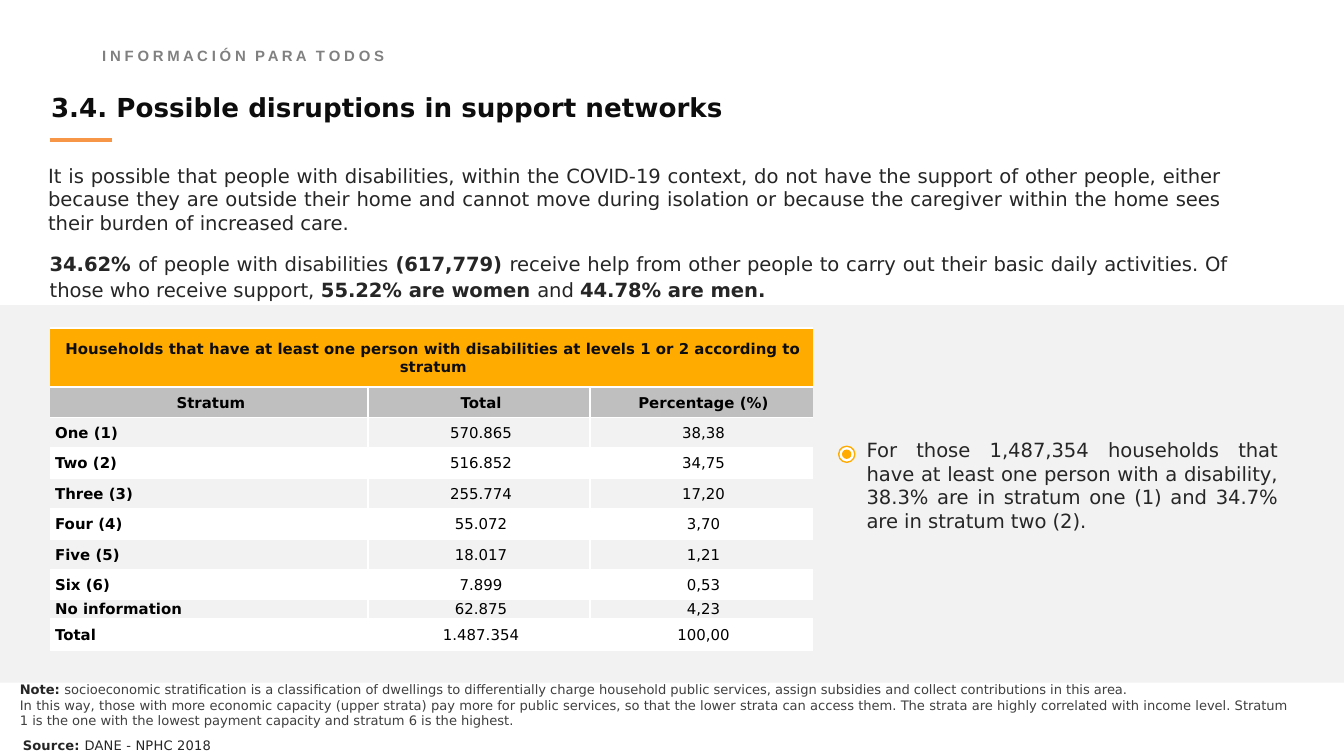
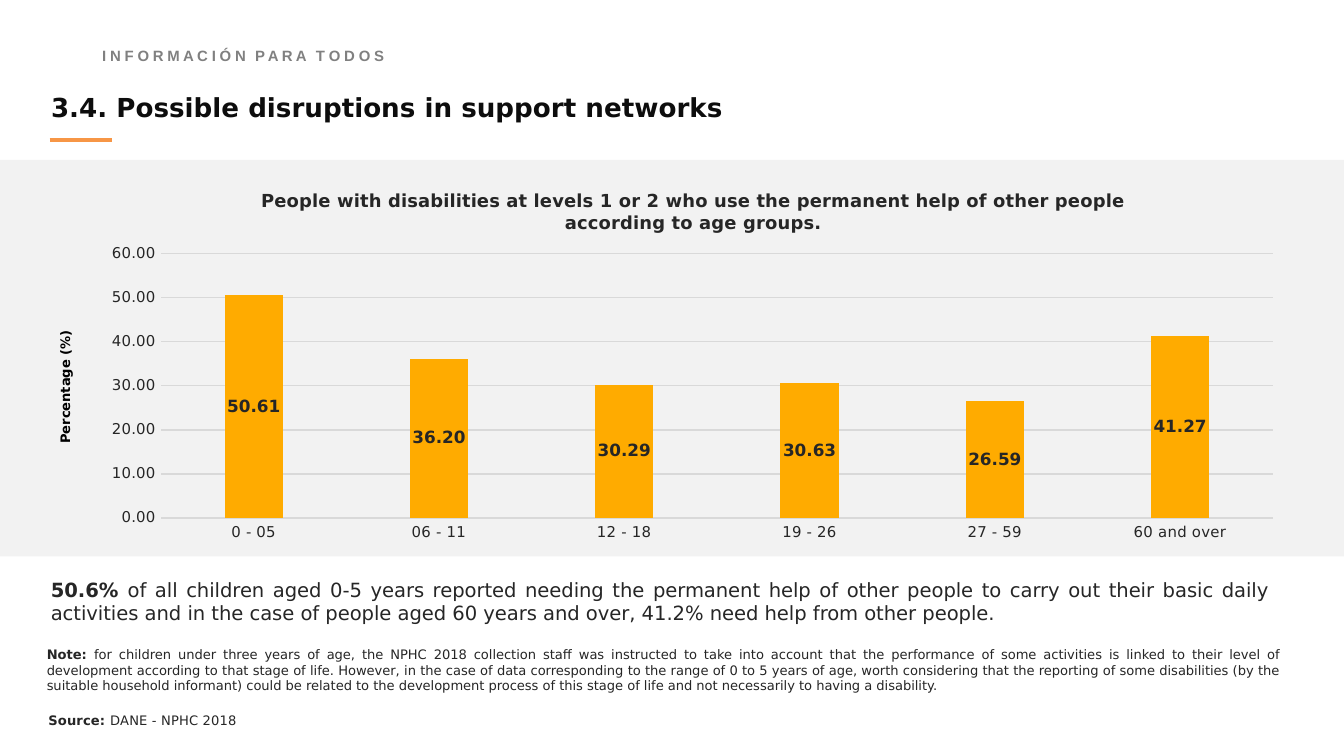
from dataclasses import dataclass

from pptx import Presentation
from pptx.chart.data import CategoryChartData
from pptx.dml.color import RGBColor
from pptx.enum.chart import XL_CHART_TYPE as Chart, XL_LABEL_POSITION as LabelAt, XL_TICK_MARK as Tick
from pptx.enum.shapes import MSO_CONNECTOR as Connector, MSO_SHAPE as Shape
from pptx.enum.text import MSO_ANCHOR as Anchor, MSO_AUTO_SIZE as AutoSize, PP_ALIGN as Align
from pptx.oxml import parse_xml
from pptx.oxml.ns import nsdecls, qn
from pptx.util import Inches, Pt

AMBER, ORANGE, WHITE, BLACK = "FFAB00", "F79646", "FFFFFF", "000000"
BAND, GRID, HEADING = "F2F2F2", "D9D9D9", "BFBFBF"
INK, TITLE_INK, NOTE_INK, MOTTO_INK = "262626", "0D0D0D", "404040", "808080"
PADDED, TIGHT = (0.1, 0.05, 0.1, 0.05), (0.02, 0.01, 0, 0)
CELL_INSETS = (0.04, 0.01, 0.01, 0)


def rgb(value):
    return RGBColor.from_string(value)


def inches(values):
    return [Inches(value) for value in values]


@dataclass
class Part:
    """A stretch of text in one style."""
    text: str
    bold: bool = False
    color: str = INK
    spacing: float = 0


class Deck:
    font = "DejaVu Sans"

    def __init__(self):
        self.file = Presentation()
        self.file.slide_width = Inches(10)
        self.file.slide_height = Inches(10 * 9 / 16)
        self.slide = None

    def new_slide(self, title, band_top, band_height):
        """Start a slide with the shared motto, band, title and rule."""
        self.slide = self.file.slides.add_slide(self.file.slide_layouts[6])
        motto = []
        for word in ("INFORMACIÓN", "PARA", "TODOS"):
            if motto:
                motto.append(Part(" ", True, MOTTO_INK, 2.6))
            motto.append(Part(" ".join(word), True, MOTTO_INK, -0.1))
        self.text((0.74, 0.3, 3.07, 0.19), [motto], 8, font="Arial",
                  insets=TIGHT, leading=1.3)
        self.shape(Shape.RECTANGLE, (0, band_top, 10, band_height), BAND)
        self.text((0.37, 0.68, 7.26, 0.24), [[Part(title, True, TITLE_INK)]], 14,
                  align=Align.LEFT, insets=(0.01, 0, 0, 0))
        self.rule((0.37, 1.04), (0.83, 1.04))

    def fill_paragraph(self, paragraph, parts, size, align, font=None):
        paragraph.alignment = align
        for part in parts:
            run = paragraph.add_run()
            run.text = part.text
            run.font.name = font or self.font
            run.font.size = Pt(size)
            run.font.bold = part.bold
            run.font.color.rgb = rgb(part.color)
            if part.spacing:
                run._r.get_or_add_rPr().set("spc", str(round(part.spacing * 100)))

    def text(self, box, paragraphs, size, align=Align.JUSTIFY, font=None,
             insets=PADDED, leading=None, rotation=0):
        holder = self.slide.shapes.add_textbox(*inches(box))
        holder.rotation = rotation
        frame = holder.text_frame
        frame.word_wrap = True
        frame.auto_size = AutoSize.SHAPE_TO_FIT_TEXT
        (frame.margin_left, frame.margin_top,
         frame.margin_right, frame.margin_bottom) = inches(insets)
        for index, parts in enumerate(paragraphs):
            paragraph = frame.add_paragraph() if index else frame.paragraphs[0]
            if leading:
                paragraph.line_spacing = leading
            self.fill_paragraph(paragraph, parts, size, align, font)

    def source(self, left, top):
        self.text((left, top, 6.8, 0.13),
                  [[Part("Source: ", True, spacing=0.1),
                    Part("DANE - NPHC 2018", spacing=0.1)]],
                  7, align=Align.LEFT, insets=TIGHT, leading=1.04)

    def shape(self, kind, box, fill, line=None, group=None):
        shapes = group.shapes if group else self.slide.shapes
        drawn = shapes.add_shape(kind, *inches(box))
        drawn.shadow.inherit = False
        drawn.fill.solid()
        drawn.fill.fore_color.rgb = rgb(fill)
        if line:
            drawn.line.color.rgb = rgb(line)
            drawn.line.width = Pt(0.75)
        else:
            drawn.line.fill.background()

    def rule(self, start, end):
        line = self.slide.shapes.add_connector(Connector.STRAIGHT, *inches(start + end))
        line.line.color.rgb = rgb(ORANGE)
        line.line.width = Pt(2)
        line._element.spPr.append(parse_xml(f"<a:effectLst {nsdecls('a')}/>"))

    def bullet(self, left, top, ring=0.12, dot=0.07):
        """A ringed dot."""
        group = self.slide.shapes.add_group_shape()
        inset = (ring - dot) / 2
        self.shape(Shape.OVAL, (left, top, ring, ring), WHITE, AMBER, group)
        self.shape(Shape.OVAL, (left + inset, top + inset, dot, dot), AMBER, group=group)

    def cell(self, cell, part, align, fill, open_sides=""):
        cell.vertical_anchor = Anchor.MIDDLE
        (cell.margin_left, cell.margin_top,
         cell.margin_right, cell.margin_bottom) = inches(CELL_INSETS)
        self.fill_paragraph(cell.text_frame.paragraphs[0], [part], 8, align)
        properties = cell._tc.get_or_add_tcPr()
        for side in "LRTB":
            paint = ("<a:noFill/>" if side in open_sides else
                     f'<a:solidFill><a:srgbClr val="{WHITE}"/></a:solidFill>')
            properties.append(parse_xml(
                f'<a:ln{side} {nsdecls("a")} w="{Pt(1)}">{paint}</a:ln{side}>'))
        if fill:
            cell.fill.solid()
            cell.fill.fore_color.rgb = rgb(fill)
        else:
            cell.fill.background()

    def table(self, box, widths, heights, caption, headings, rows):
        grid = self.slide.shapes.add_table(
            len(heights), len(widths), *inches(box)).table
        grid.first_row = grid.horz_banding = False
        for column, width in zip(grid.columns, inches(widths)):
            column.width = width
        for row, height in zip(grid.rows, inches(heights)):
            row.height = height
        last = len(widths) - 1
        grid.cell(0, 0).merge(grid.cell(0, last))
        self.cell(grid.cell(0, 0), Part(caption, True, TITLE_INK), Align.CENTER, AMBER, "LR")
        for r, values in enumerate([headings, *rows], start=1):
            fill = HEADING if r == 1 else WHITE if r % 2 else None
            for c, value in enumerate(values):
                is_label = c == 0 and r > 1
                self.cell(grid.cell(r, c), Part(value, r == 1 or c == 0, BLACK),
                          Align.JUSTIFY if is_label else Align.CENTER, fill,
                          {0: "L", last: "R"}.get(c, ""))

    def style_font(self, font, size, bold=False):
        font.name, font.size, font.bold = self.font, Pt(size), bold
        font.color.rgb = rgb(INK)

    @staticmethod
    def place(element, index, target="", **fractions):
        """Fix a chart part at fractions of the chart's size."""
        for old in element.findall(qn("c:layout")):
            element.remove(old)
        inner = f'<c:layoutTarget val="{target}"/>' if target else ""
        modes = "".join(f'<c:{axis}Mode val="edge"/>' for axis in "xy")
        sizes = "".join(f'<c:{key} val="{value}"/>' for key, value in fractions.items())
        element.insert(index, parse_xml(
            f'<c:layout {nsdecls("c")}><c:manualLayout>{inner}{modes}{sizes}'
            "</c:manualLayout></c:layout>"))

    def column_chart(self, box, title, categories, values):
        data = CategoryChartData(number_format="0.00")
        data.categories = categories
        data.add_series("Series 1", values)
        chart = self.slide.shapes.add_chart(
            Chart.COLUMN_CLUSTERED, *inches(box), data).chart
        chart.has_legend = False
        self.style_font(chart.font, 8)

        # Title and plot position
        chart.has_title = True
        heading = chart.chart_title.text_frame.paragraphs[0]
        self.fill_paragraph(heading, [Part(title, True)], 9.6, Align.CENTER)
        self.place(chart.chart_title._element, 1, x=0.14, y=0.04)
        self.place(chart._chartSpace.chart.plotArea, 0, "inner",
                   x=0.06, y=0.22, w=0.92, h=0.7)

        # Axes
        for axis in (chart.category_axis, chart.value_axis):
            axis.major_tick_mark = axis.minor_tick_mark = Tick.NONE
            self.style_font(axis.tick_labels.font, 8)
        chart.category_axis.format.line.color.rgb = rgb(GRID)
        chart.category_axis.format.line.width = Pt(0.75)
        scale = chart.value_axis
        scale.minimum_scale, scale.maximum_scale, scale.major_unit = 0, 60, 10
        scale.format.line.fill.background()
        scale.major_gridlines.format.line.color.rgb = rgb(GRID)
        scale.major_gridlines.format.line.width = Pt(0.75)
        scale.tick_labels.number_format = "0.00"
        scale.tick_labels.number_format_is_linked = False

        # Columns and their labels
        plot = chart.plots[0]
        plot.gap_width, plot.overlap, plot.vary_by_categories = 219, -27, False
        columns = plot.series[0]
        columns.format.fill.solid()
        columns.format.fill.fore_color.rgb = rgb(AMBER)
        labels = columns.data_labels
        labels.show_value = True
        labels.position = LabelAt.CENTER
        labels.number_format, labels.number_format_is_linked = "0.00", False
        self.style_font(labels.font, 9, True)


def strata_slide(deck, title):
    deck.new_slide(title, 2.27, 2.81)
    deck.text((0.26, 1.17, 8.93, 0.63), [[Part(
        "It is possible that people with disabilities, within the COVID-19 context, do not "
        "have the support of other people, either because they are outside their home and "
        "cannot move during isolation or because the caregiver within the home sees their "
        "burden of increased care.")]], 10.5)
    deck.text((0.26, 1.81, 9.05, 0.51), [[
        Part("34.62% ", True), Part("of people with disabilities "), Part("(617,779) ", True),
        Part("receive help from other people to carry out their basic daily activities. "
             "Of those who receive support, "),
        Part("55.22% are women ", True), Part("and "), Part("44.78% are men.", True),
    ]], 10.5, insets=(0.11, 0.05, 0.17, 0.05), leading=1.1)

    # Six equal rows take what the other rows leave
    caption_row, last_rows = 0.44, [0.22, 0.15, 0.23]
    even_row = (2.4 - caption_row - sum(last_rows)) / 6
    deck.table(
        (0.37, 2.44, 5.68, 2.4), (2.37, 1.65, 1.66),
        [caption_row] + [even_row] * 6 + last_rows,
        "Households that have at least one person with disabilities at levels 1 or 2 "
        "according to stratum",
        ("Stratum", "Total", "Percentage (%)"),
        [("One (1)", "570.865", "38,38"),
         ("Two (2)", "516.852", "34,75"),
         ("Three (3)", "255.774", "17,20"),
         ("Four (4)", "55.072", "3,70"),
         ("Five (5)", "18.017", "1,21"),
         ("Six (6)", "7.899", "0,53"),
         ("No information", "62.875", "4,23"),
         ("Total", "1.487.354", "100,00")])

    deck.text((6.35, 3.21, 3.26, 0.81), [[Part(
        "For those 1,487,354 households that have at least one person with a disability, "
        "38.3% are in stratum one (1) and 34.7% are in stratum two (2).")]], 10.5)
    deck.bullet(6.24, 3.32)
    deck.text((0.05, 5.02, 9.63, 0.45), [
        [Part("Note: ", True),
         Part("socioeconomic stratification is a classification of dwellings to differentially "
              "charge household public services, assign subsidies and collect contributions in "
              "this area.", color=NOTE_INK)],
        [Part("In this way, those with more economic capacity (upper strata) pay more for public "
              "services, so that the lower strata can access them. The strata are highly "
              "correlated with income level. Stratum 1 is the one with the lowest payment "
              "capacity and stratum 6 is the highest.", color=NOTE_INK)]], 7)
    deck.source(0.15, 5.47)


def age_slide(deck, title):
    deck.new_slide(title, 1.19, 2.95)
    deck.column_chart(
        (0.66, 1.27, 8.99, 2.81),
        "People with disabilities at levels 1 or 2 who use the permanent help of other people "
        "according to age groups.",
        ("0 - 05", "06 - 11", "12 - 18", "19 - 26", "27 - 59", "60 and over"),
        (50.61, 36.2, 30.29, 30.63, 26.59, 41.27))
    deck.text((-0.14, 2.77, 1.25, 0.22), [[Part("Percentage (%)", True, BLACK)]], 7,
              align=Align.CENTER, rotation=270)
    deck.text((0.28, 4.25, 9.27, 0.47), [[
        Part("50.6% ", True),
        Part("of all children aged 0-5 years reported needing the permanent help of other "
             "people to carry out their basic daily activities and in the case of people aged "
             "60 years and over, 41.2% need help from other people.")]], 10.5)
    deck.text((0.25, 4.76, 9.37, 0.45), [[
        Part("Note: ", True),
        Part("for children under three years of age, the NPHC 2018 collection staff was "
             "instructed to take into account that the performance of some activities is linked "
             "to their level of development according to that stage of life. However, in the "
             "case of data corresponding to the range of 0 to 5 years of age, worth considering "
             "that the reporting of some disabilities (by the suitable household informant) "
             "could be related to the development process of this stage of life and not "
             "necessarily to having a disability.")]], 7)
    deck.source(0.34, 5.29)


def main():
    deck = Deck()
    title = "3.4. Possible disruptions in support networks"
    strata_slide(deck, title)
    age_slide(deck, title)
    deck.file.save("out.pptx")


if __name__ == "__main__":
    main()
